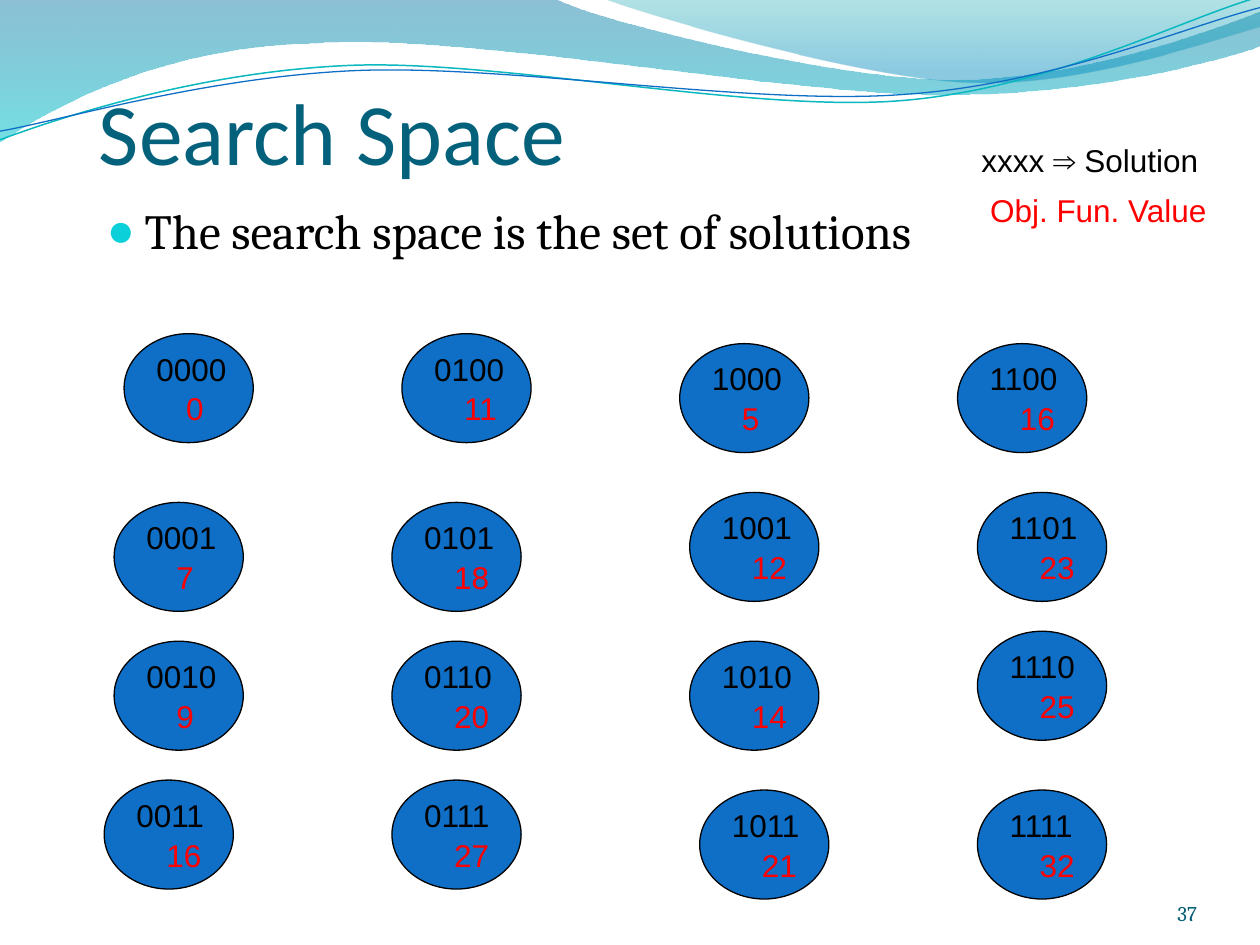
"""Build the Search Space slide: a field of four-bit solutions and their objective values."""
from dataclasses import dataclass

import pptx
import pptx.dml.color
import pptx.enum.shapes
import pptx.enum.text
import pptx.oxml
import pptx.oxml.ns
import pptx.util
from lxml import etree

CELL = pptx.util.Inches(0.1)
COLUMNS, ROWS = 100, 75
STRAND_ROTATION = 357.3
BIT_WEIGHTS = (5, 11, 9, 7)
FIELD_LEFT, FIELD_TOP = 9.85, 28.85
COLUMN_PITCH, ROW_PITCH, NUDGE = 22.05, 11.02, 0.79
NUDGES = (
    ((0, -3), (0, -3), (0, -2), (0, -2)),
    ((-1, 0), (-1, 0), (1, -1), (2, -1)),
    ((-1, 0), (-1, 0), (1, 0), (2, -1)),
    ((-2, 0), (-1, 0), (2, 1), (2, 1)),
)

WIDE_WAVE = ((0, 0), (44, -0.1), (47.6, 1.7, 66.4, 6.3, 75.8, 6.3),
             (85.3, 6.3, 95.8, 2.6, 100, 0.9), (100.1, 3.6),
             (98.3, 4.4, 87, 7.6, 74.6, 7.5), (62.2, 7.5, 38.2, 2.8, 25.7, 3.4),
             (12.9, 3.6, 4.6, 8.3, -0.1, 11.3), (0, 0))
RIGHT_WAVE = ((47.9, -0.1), (50.9, 1.1, 68.2, 6.2, 76.9, 6.5),
              (85.6, 6.9, 96.1, 3.2, 100, 2.1), (100, 0), (47.9, -0.1))
TEAL_STRAND = ((-0.2, 8.74), (4.68, 7.18, 15.84, 4.09, 27.75, 4.15),
               (39.56, 4.21, 59.14, 9.34, 71.17, 9.01),
               (83.2, 8.67, 93.95, 3.57, 100.03, 2.16))
BLUE_STRAND = ((-0.16, 8.05), (4.58, 7.47, 16.43, 4.52, 28.34, 4.58),
               (40.35, 4.65, 59.57, 8.86, 71.6, 8.52),
               (83.52, 8.28, 94.23, 4.18, 100.19, 2.97))


@dataclass(frozen=True)
class Theme:
    """Colours, fonts and type sizes of the slide."""
    title: str = "04617B"
    text: str = "000000"
    value: str = "FF0000"
    solution: str = "0F6FC6"
    teal: str = "0AB8BF"
    bullet: str = "0BD0D9"
    number: str = "045D75"
    wide_wave: tuple = ((0, "0074A1", 45), (1, "00C6CF", 55))
    right_wave: tuple = ((0, "00A1A9", 30), (0.8, "008BBF", 45))
    title_font: str = "Calibri"
    body_font: str = "Cambria"
    label_font: str = "Arial"
    title_size: int = 50
    body_size: int = 28
    label_size: int = 18
    number_size: int = 12


THEME = Theme()


def cells(count):
    """Return a length of so many grid cells."""
    return pptx.util.Emu(round(count * CELL))


def colour(code):
    """Return the colour for a hexadecimal code."""
    return pptx.dml.color.RGBColor.from_string(code)


def bend(shape, segments):
    """Join the three points of each curved segment into one cubic curve."""
    lines = shape.element.iter(pptx.oxml.ns.qn("a:lnTo"))
    lines = iter(list(lines))
    for segment in segments:
        line = next(lines)
        if len(segment) == 2:
            continue
        line.tag = pptx.oxml.ns.qn("a:cubicBezTo")
        for other in (next(lines), next(lines)):
            line.append(other[0])
            other.getparent().remove(other)


def add_outline(shapes, outline, close):
    """Add a freeform along an outline of straight and curved segments."""
    start, *segments = outline
    points = [(cells(x), cells(y)) for segment in segments
              for x, y in zip(segment[::2], segment[1::2])]
    builder = shapes.build_freeform(*map(cells, start))
    builder.add_line_segments(points, close=close)
    shape = builder.convert_to_shape()
    bend(shape, segments)
    shape.shadow.inherit = False
    return shape


def add_wave(shapes, outline, stops):
    """Add a translucent wave shaded from top to bottom."""
    shape = add_outline(shapes, outline, True)
    shape.line.fill.background()
    shape.fill.gradient()
    shape.fill.gradient_angle = 270
    for stop, (position, code, _) in zip(shape.fill.gradient_stops, stops):
        stop.position = position
        stop.color.rgb = colour(code)
    tag = pptx.oxml.ns.qn("a:srgbClr")
    for element, (_, _, opacity) in zip(shape.element.spPr.iter(tag), stops):
        etree.SubElement(element, pptx.oxml.ns.qn("a:alpha"), val=str(opacity * 1000))


def add_strand(shapes, outline, code, width):
    """Add a thin curved line, slightly turned."""
    shape = add_outline(shapes, outline, False)
    shape.rotation = STRAND_ROTATION
    shape.fill.background()
    shape.line.color.rgb = colour(code)
    shape.line.width = pptx.util.Pt(width)


def add_bullet(paragraph):
    """Give a paragraph a round coloured bullet with a hanging indent."""
    properties = paragraph._p.get_or_add_pPr()
    properties.set("marL", str(cells(3)))
    properties.set("indent", str(-cells(3)))
    namespace = pptx.oxml.ns.nsdecls("a")
    for markup in (f'<a:buClr {namespace}><a:srgbClr val="{THEME.bullet}"/></a:buClr>',
                   f'<a:buSzPct {namespace} val="95000"/>',
                   f'<a:buFont {namespace} typeface="{THEME.label_font}"/>',
                   f'<a:buChar {namespace} char="●"/>'):
        properties.append(pptx.oxml.parse_xml(markup))


def add_text(shapes, place, text, font, size, code, wrap=True, bottom=False,
             margins=(1, 0.5, 1, 0.5), bullet=False):
    """Add a one-paragraph text box and return its paragraph."""
    frame = shapes.add_textbox(*map(cells, place)).text_frame
    frame.word_wrap = wrap
    if not wrap:
        frame.auto_size = pptx.enum.text.MSO_AUTO_SIZE.SHAPE_TO_FIT_TEXT
    anchors = pptx.enum.text.MSO_ANCHOR
    frame.vertical_anchor = anchors.BOTTOM if bottom else anchors.TOP
    (frame.margin_left, frame.margin_top,
     frame.margin_right, frame.margin_bottom) = map(cells, margins)
    paragraph = frame.paragraphs[0]
    paragraph.text = text
    if bullet:
        add_bullet(paragraph)
    paragraph.font.name = font
    paragraph.font.size = pptx.util.Pt(size)
    paragraph.font.color.rgb = colour(code)
    return paragraph


def add_label(shapes, place, text, code, wrap=False):
    """Add a label in the label type."""
    add_text(shapes, place, text, THEME.label_font, THEME.label_size, code, wrap)


def add_solution(slide, left, top, bits):
    """Add a solution: an ellipse with its bits and its objective value."""
    shapes = slide.shapes.add_group_shape().shapes
    ellipse = shapes.add_shape(pptx.enum.shapes.MSO_SHAPE.OVAL,
                               *map(cells, (left, top, 10.25, 8.65)))
    ellipse.shadow.inherit = False
    ellipse.fill.solid()
    ellipse.fill.fore_color.rgb = colour(THEME.solution)
    ellipse.line.color.rgb = colour(THEME.text)
    ellipse.line.width = pptx.util.Pt(0.75)
    value = str(sum(weight * int(bit) for weight, bit in zip(BIT_WEIGHTS, bits)))
    add_label(shapes, (left + 1.57, top + 0.77, 7.6, 4), bits, THEME.text)
    add_label(shapes, (left + 3.95, top + 3.93, 2 + 1.4 * len(value), 4), value, THEME.value)


def main():
    """Build and save the slide."""
    presentation = pptx.Presentation()
    presentation.slide_width, presentation.slide_height = cells(COLUMNS), cells(ROWS)
    slide = presentation.slides.add_slide(presentation.slide_layouts[6])
    shapes = slide.shapes
    add_wave(shapes, WIDE_WAVE, THEME.wide_wave)
    add_wave(shapes, RIGHT_WAVE, THEME.right_wave)
    strands = shapes.add_group_shape().shapes
    add_strand(strands, TEAL_STRAND, THEME.teal, 0.85)
    add_strand(strands, BLUE_STRAND, THEME.solution, 0.75)
    add_text(shapes, (7.85, 2.05, 85, 12.5), "Search Space", THEME.title_font,
             THEME.title_size, THEME.title, bottom=True, margins=(0, 0.5, 0, 0))
    add_text(shapes, (7.5, 15.45, 81.2, 7.3), "The search space is the set of solutions",
             THEME.body_font, THEME.body_size, THEME.text, bullet=True)
    for row, nudges in enumerate(NUDGES):
        for column, (across, down) in enumerate(nudges):
            add_solution(slide, FIELD_LEFT + column * COLUMN_PITCH + across * NUDGE,
                         FIELD_TOP + row * ROW_PITCH + down * NUDGE,
                         f"{column * 4 + row:04b}")
    add_label(shapes, (77.6, 14.7, 19.7, 4), "Obj. Fun. Value", THEME.value, wrap=True)
    add_label(shapes, (76.9, 10.7, 21.2, 4), "xxxx ⇒ Solution", THEME.text, wrap=True)
    number = add_text(shapes, (86.7, 69.5, 8.3, 4), "37", THEME.body_font,
                      THEME.number_size, THEME.number, bottom=True, margins=(0, 0, 0, 0))
    number.alignment = pptx.enum.text.PP_ALIGN.RIGHT
    presentation.save("out.pptx")


if __name__ == "__main__":
    main()
